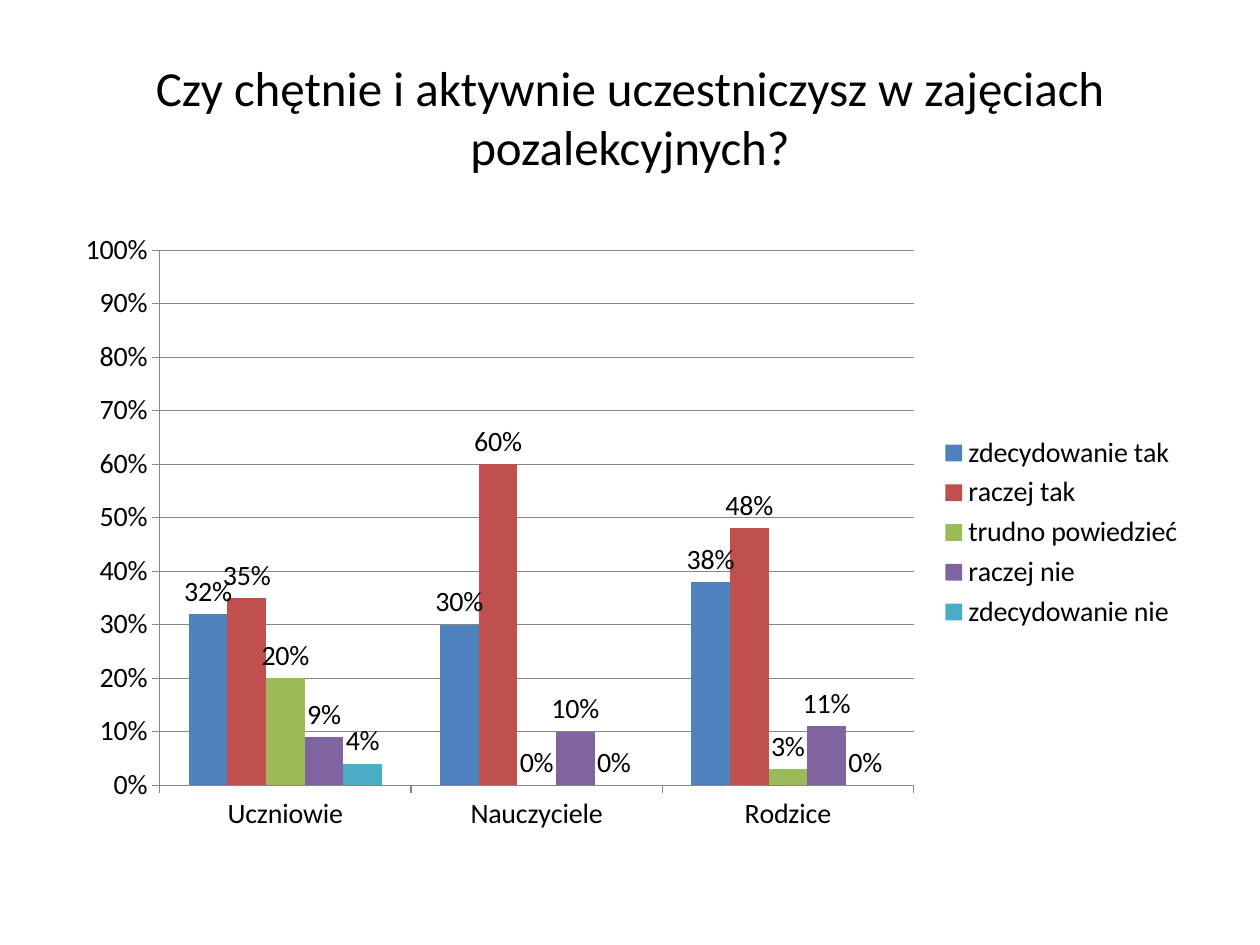
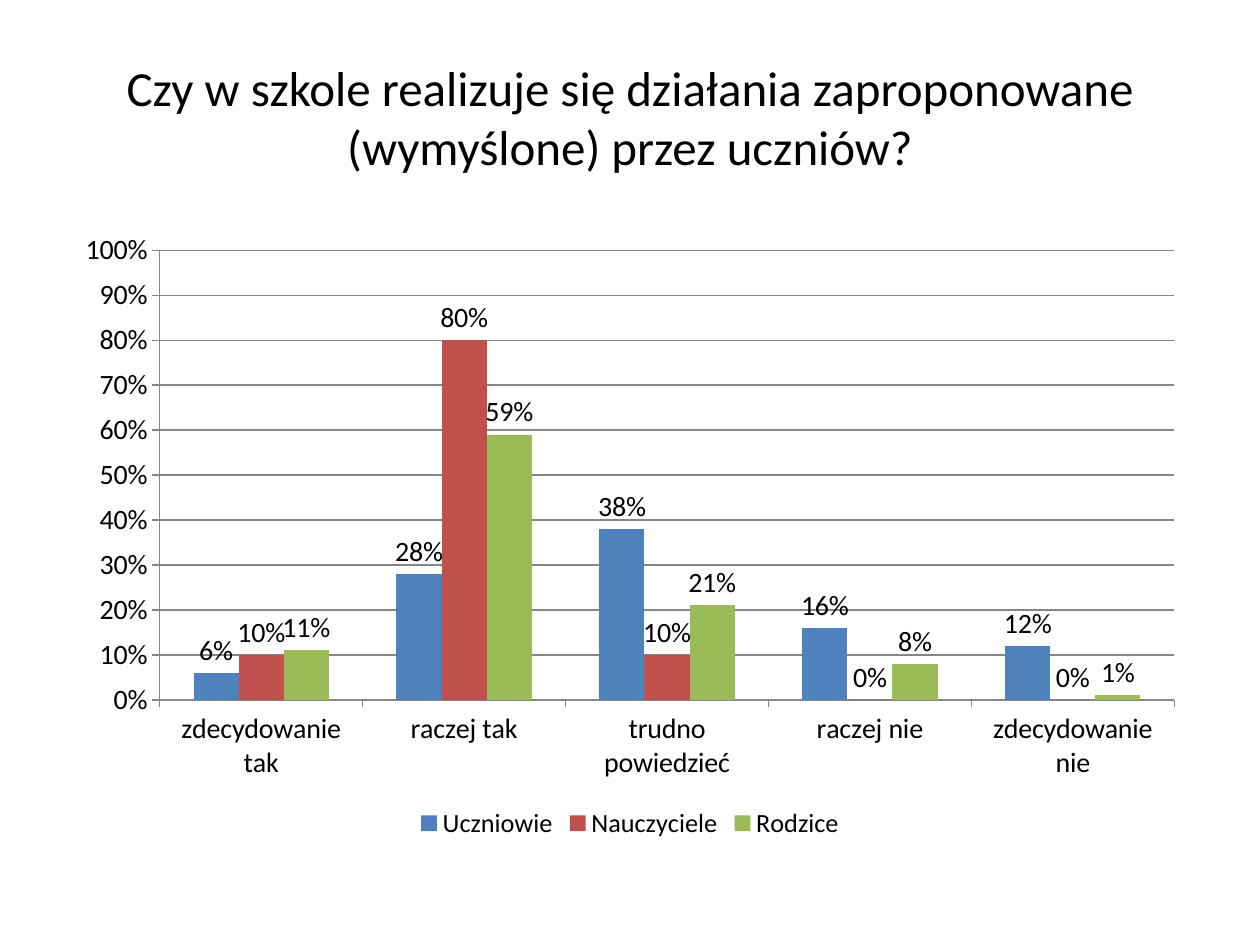
from dataclasses import dataclass

from pptx import Presentation
from pptx.chart.data import CategoryChartData
from pptx.dml.color import RGBColor
from pptx.enum.chart import XL_CHART_TYPE, XL_LABEL_POSITION, XL_LEGEND_POSITION, XL_TICK_MARK
from pptx.enum.text import MSO_ANCHOR, PP_ALIGN
from pptx.util import Cm, Pt

ANSWERS = ["zdecydowanie tak", "raczej tak", "trudno powiedzieć", "raczej nie", "zdecydowanie nie"]
GROUPS = ["Uczniowie", "Nauczyciele", "Rodzice"]

QUESTIONS = [
    {
        "title": "Czy chętnie i aktywnie uczestniczysz w zajęciach pozalekcyjnych?",
        "categories": GROUPS,
        "series": ANSWERS,
        "values": [
            (0.32, 0.3, 0.38),
            (0.35, 0.6, 0.48),
            (0.2, 0, 0.03),
            (0.09, 0.1, 0.11),
            (0.04, 0, 0),
        ],
        "legend": XL_LEGEND_POSITION.RIGHT,
        "legend_size": 16,
    },
    {
        "title": "Czy w szkole realizuje się działania zaproponowane (wymyślone) przez uczniów?",
        "categories": ANSWERS,
        "series": GROUPS,
        "values": [
            (0.06, 0.28, 0.38, 0.16, 0.12),
            (0.1, 0.8, 0.1, 0, 0),
            (0.11, 0.59, 0.21, 0.08, 0.01),
        ],
        "legend": XL_LEGEND_POSITION.BOTTOM,
        "legend_size": 15,
    },
]


@dataclass(frozen=True)
class Theme:
    font: str = "Calibri"
    text: str = "000000"
    background: str = "FFFFFF"
    grid: str = "868686"
    series: tuple = ("4F81BD", "C0504D", "9BBB59", "8064A2", "4BACC6")
    title_size: int = 28
    chart_size: int = 16


THEME = Theme()
SLIDE_WIDTH, SLIDE_HEIGHT = Cm(25.4), Cm(19.05)
MARGIN = Cm(1.27)
CONTENT_WIDTH = SLIDE_WIDTH - 2 * MARGIN
TITLE_TOP, TITLE_HEIGHT = Cm(0.76), Cm(3.18)
CHART_TOP, CHART_HEIGHT = Cm(4.45), Cm(12.57)

TITLE_FRAME = {"word_wrap": True, "vertical_anchor": MSO_ANCHOR.MIDDLE}
CATEGORY_AXIS = {"major_tick_mark": XL_TICK_MARK.OUTSIDE, "has_major_gridlines": False}
VALUE_AXIS = {
    "minimum_scale": 0,
    "maximum_scale": 1,
    "major_unit": 0.1,
    "major_tick_mark": XL_TICK_MARK.OUTSIDE,
    "has_major_gridlines": True,
}
PERCENT = {"number_format": "0%", "number_format_is_linked": False}
LABELS = {**PERCENT, "show_value": True, "position": XL_LABEL_POSITION.OUTSIDE_END}
PLOT = {"gap_width": 150, "overlap": 0, "vary_by_categories": False, "has_data_labels": True}


def apply_format(target, values):
    for name, value in values.items():
        setattr(target, name, value)


def style_font(font, size):
    apply_format(font, {"name": THEME.font, "size": Pt(size), "bold": False})
    font.color.rgb = RGBColor.from_string(THEME.text)


def style_line(line):
    line.color.rgb = RGBColor.from_string(THEME.grid)
    line.width = Pt(0.75)


def add_title(slide, text):
    shape = slide.shapes.add_textbox(MARGIN, TITLE_TOP, CONTENT_WIDTH, TITLE_HEIGHT)
    apply_format(shape.text_frame, TITLE_FRAME)
    paragraph = shape.text_frame.paragraphs[0]
    paragraph.alignment = PP_ALIGN.CENTER
    run = paragraph.add_run()
    run.text = text
    style_font(run.font, THEME.title_size)


def add_answer_chart(slide, question):
    data = CategoryChartData(number_format="0%")
    data.categories = question["categories"]
    for name, values in zip(question["series"], question["values"]):
        data.add_series(name, values)
    chart = slide.shapes.add_chart(
        XL_CHART_TYPE.COLUMN_CLUSTERED, MARGIN, CHART_TOP, CONTENT_WIDTH, CHART_HEIGHT, data
    ).chart
    apply_format(chart, {"has_title": False, "has_legend": True})
    style_font(chart.font, THEME.chart_size)

    apply_format(chart.legend, {"position": question["legend"], "include_in_layout": False})
    style_font(chart.legend.font, question["legend_size"])

    for axis, values in ((chart.category_axis, CATEGORY_AXIS), (chart.value_axis, VALUE_AXIS)):
        apply_format(axis, values)
        style_font(axis.tick_labels.font, THEME.chart_size)
        style_line(axis.format.line)
    apply_format(chart.value_axis.tick_labels, PERCENT)
    style_line(chart.value_axis.major_gridlines.format.line)

    plot = chart.plots[0]
    apply_format(plot, PLOT)
    apply_format(plot.data_labels, LABELS)
    style_font(plot.data_labels.font, THEME.chart_size)
    for series, color in zip(plot.series, THEME.series):
        series.invert_if_negative = False
        series.format.fill.solid()
        series.format.fill.fore_color.rgb = RGBColor.from_string(color)


def main():
    presentation = Presentation()
    apply_format(presentation, {"slide_width": SLIDE_WIDTH, "slide_height": SLIDE_HEIGHT})
    blank_layout = presentation.slide_layouts[6]
    for question in QUESTIONS:
        slide = presentation.slides.add_slide(blank_layout)
        slide.background.fill.solid()
        slide.background.fill.fore_color.rgb = RGBColor.from_string(THEME.background)
        add_title(slide, question["title"])
        add_answer_chart(slide, question)
    presentation.save("out.pptx")


if __name__ == "__main__":
    main()
